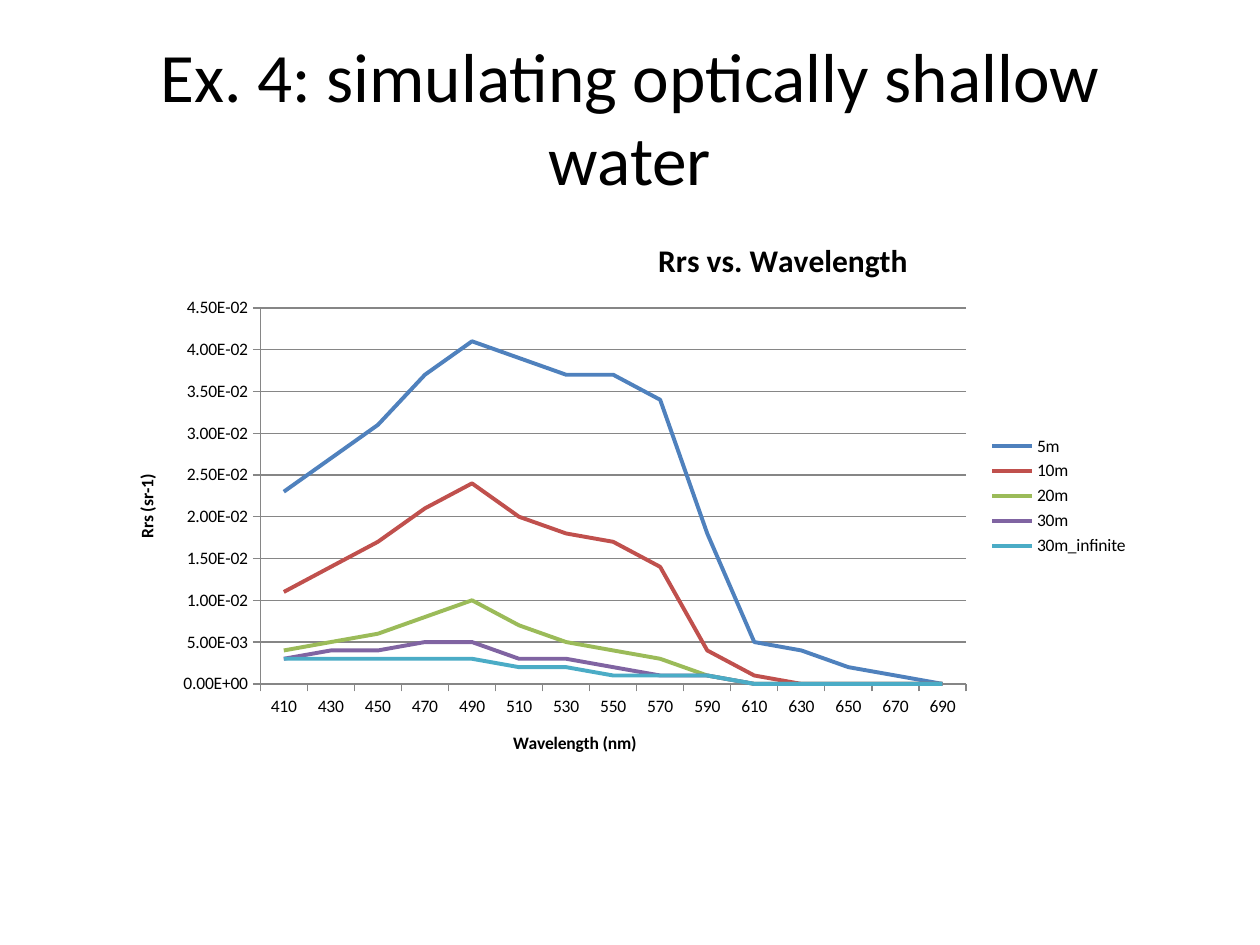
import pptx
import pptx.chart.data
import pptx.dml.color
import pptx.enum.chart
import pptx.enum.text
import pptx.oxml
import pptx.oxml.ns
import pptx.util

HEADING = "Ex. 4: simulating optically shallow water"
CHART_TITLE = "Rrs vs. Wavelength"
WAVELENGTH_TITLE = "Wavelength (nm)"
REFLECTANCE_TITLE = "Rrs (sr-1)"
WAVELENGTHS = [str(value) for value in range(410, 691, 20)]
DEPTHS = {
    "5m": [0.023, 0.027, 0.031, 0.037, 0.041, 0.039, 0.037, 0.037,
           0.034, 0.018, 0.005, 0.004, 0.002, 0.001, 0],
    "10m": [0.011, 0.014, 0.017, 0.021, 0.024, 0.02, 0.018, 0.017,
            0.014, 0.004, 0.001, 0, 0, 0, 0],
    "20m": [0.004, 0.005, 0.006, 0.008, 0.01, 0.007, 0.005, 0.004,
            0.003, 0.001, 0, 0, 0, 0, 0],
    "30m": [0.003, 0.004, 0.004, 0.005, 0.005, 0.003, 0.003, 0.002,
            0.001, 0.001, 0, 0, 0, 0, 0],
    "30m_infinite": [0.003, 0.003, 0.003, 0.003, 0.003, 0.002, 0.002, 0.001,
                     0.001, 0.001, 0, 0, 0, 0, 0],
}

THEME = {
    "font": "Calibri",
    "text": "000000",
    "axis": "868686",
    "series": ["4F81BD", "C0504D", "9BBB59", "8064A2", "4BACC6"],
    "heading_size": 39.6,
    "title_size": 18,
    "label_size": 10,
    "axis_width": 0.75,
    "series_width": 2.25,
}

SLIDE = (10, 7.5)
HEADING_PERCENT = (5, 4, 90, 16.6)
CHART_PERCENT = (8.7, 22.4, 81.9, 60.3)
PLOT_PERCENT = (14.6, 16.9, 68.4, 66)
LEGEND_PERCENT = (85, 38.5, 14, 22.8)
CHART_TITLE_PERCENT = (52.6, 3.8)
WAVELENGTH_TITLE_PERCENT = (38.8, 90.7)
REFLECTANCE_TITLE_PERCENT = (2.2, 45.6)


def place(percents):
    return [pptx.util.Inches(percent / 100 * SLIDE[index % 2])
            for index, percent in enumerate(percents)]


def color(code):
    return pptx.dml.color.RGBColor.from_string(code)


def set_font(font, size, bold=False):
    font.name = THEME["font"]
    font.size = pptx.util.Pt(size)
    font.bold = bold
    font.color.rgb = color(THEME["text"])


def set_line(line, code, width):
    line.color.rgb = color(code)
    line.width = pptx.util.Pt(width)


def set_layout(element, index, percents, inner=False):
    for old in element.findall(pptx.oxml.ns.qn("c:layout")):
        element.remove(old)
    target = '<c:layoutTarget val="inner"/>' if inner else ""
    modes = "".join(f'<c:{name}Mode val="edge"/>' for name in "xy")
    values = "".join(f'<c:{name} val="{percent / 100:.3f}"/>'
                     for name, percent in zip("xywh", percents))
    element.insert(index, pptx.oxml.parse_xml(
        f'<c:layout {pptx.oxml.ns.nsdecls("c")}><c:manualLayout>'
        f"{target}{modes}{values}</c:manualLayout></c:layout>"))


def set_title(title, words, size, position):
    title.text_frame.text = words
    set_font(title.text_frame.paragraphs[0].font, size, bold=True)
    set_layout(title._element, 1, position)


def add_heading(page):
    box = page.shapes.add_textbox(*place(HEADING_PERCENT))
    frame = box.text_frame
    frame.word_wrap = True
    frame.vertical_anchor = pptx.enum.text.MSO_ANCHOR.MIDDLE
    para = frame.paragraphs[0]
    para.text = HEADING
    para.alignment = pptx.enum.text.PP_ALIGN.CENTER
    set_font(para.font, THEME["heading_size"])


def add_reflectance_chart(page):
    data = pptx.chart.data.CategoryChartData(number_format="0.00E+00")
    data.categories = WAVELENGTHS
    for depth, values in DEPTHS.items():
        data.add_series(depth, values)
    chart = page.shapes.add_chart(
        pptx.enum.chart.XL_CHART_TYPE.LINE, *place(CHART_PERCENT), data).chart
    set_font(chart.font, THEME["label_size"])

    chart.has_title = True
    set_title(chart.chart_title, CHART_TITLE, THEME["title_size"], CHART_TITLE_PERCENT)
    chart.chart_title._element.find(pptx.oxml.ns.qn("c:overlay")).set("val", "1")
    set_layout(chart._chartSpace.chart.plotArea, 0, PLOT_PERCENT, inner=True)

    chart.has_legend = True
    chart.legend.position = pptx.enum.chart.XL_LEGEND_POSITION.RIGHT
    chart.legend.include_in_layout = False
    set_layout(chart.legend._element, 1, LEGEND_PERCENT)

    for axis, words, position in (
        (chart.category_axis, WAVELENGTH_TITLE, WAVELENGTH_TITLE_PERCENT),
        (chart.value_axis, REFLECTANCE_TITLE, REFLECTANCE_TITLE_PERCENT),
    ):
        set_title(axis.axis_title, words, THEME["label_size"], position)
        set_line(axis.format.line, THEME["axis"], THEME["axis_width"])
        axis.major_tick_mark = pptx.enum.chart.XL_TICK_MARK.OUTSIDE

    scale = chart.value_axis
    scale.minimum_scale, scale.maximum_scale, scale.major_unit = 0, 0.045, 0.005
    scale.tick_labels.number_format = "0.00E+00"
    scale.tick_labels.number_format_is_linked = False
    scale.has_major_gridlines = True
    set_line(scale.major_gridlines.format.line, THEME["axis"], THEME["axis_width"])

    chart.plots[0].vary_by_categories = False
    for series, code in zip(chart.plots[0].series, THEME["series"]):
        series.smooth = False
        series.marker.style = pptx.enum.chart.XL_MARKER_STYLE.NONE
        set_line(series.format.line, code, THEME["series_width"])


def main():
    deck = pptx.Presentation()
    deck.slide_width, deck.slide_height = place((100, 100))
    page = deck.slides.add_slide(deck.slide_layouts[6])
    add_heading(page)
    add_reflectance_chart(page)
    deck.save("out.pptx")


if __name__ == "__main__":
    main()
